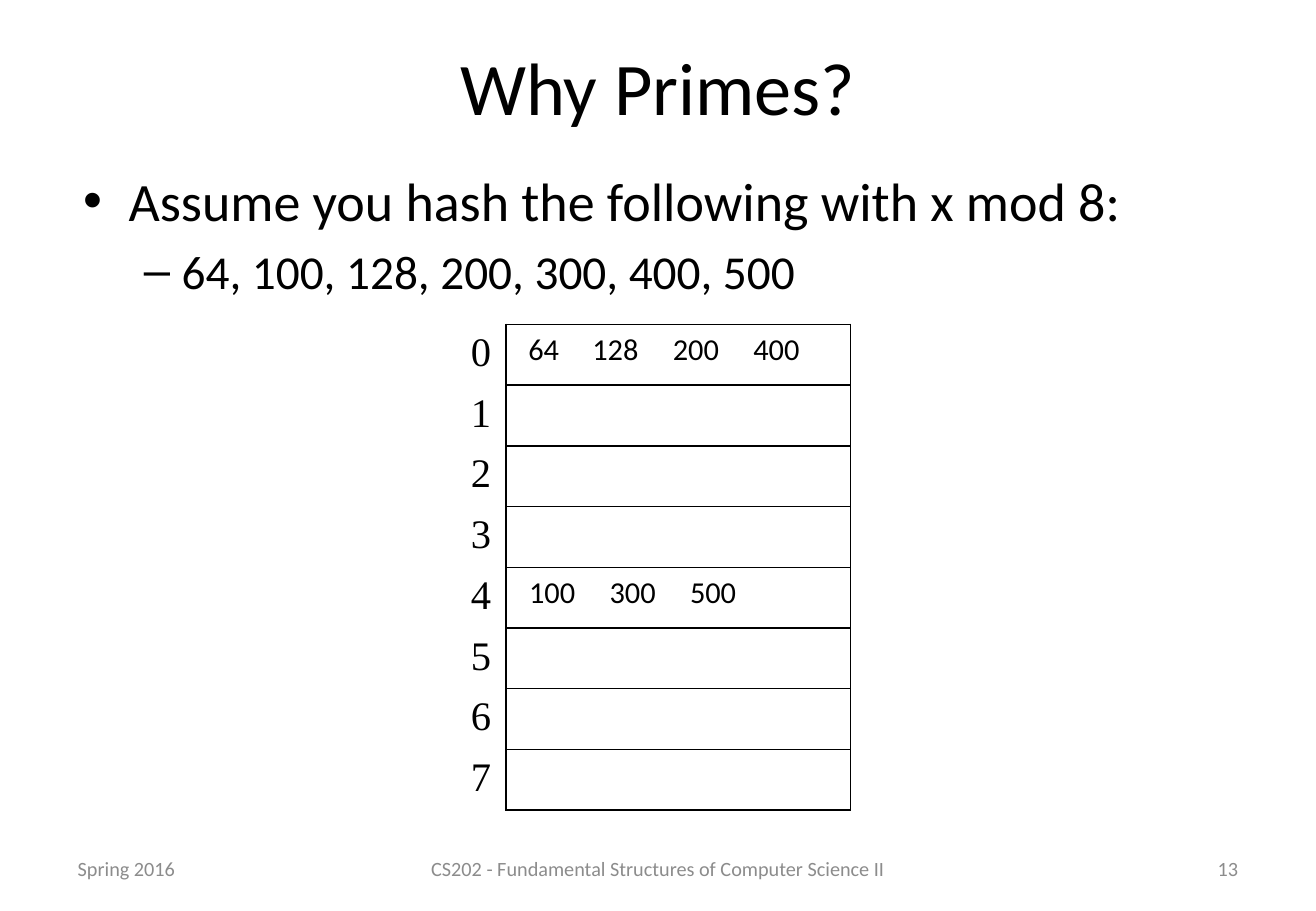
import pptx
import pptx.util
import pptx.dml.color
import pptx.enum.text
import pptx.oxml.ns
import lxml.etree

COLOURS = {"ink": "000000", "footer": "8C8C8C", "page": "FFFFFF"}
SLIDE_WIDTH, SLIDE_HEIGHT = 10.83, 7.5
COLUMN, ROW = SLIDE_WIDTH / 26, SLIDE_HEIGHT / 15
BUCKETS = 8
KEYS = [64, 100, 128, 200, 300, 400, 500]
TABLE_LEFT, TABLE_TOP, SLOT_COLUMNS = 9, 5.34, 6.8

ALIGN = pptx.enum.text.PP_ALIGN
ANCHOR = pptx.enum.text.MSO_ANCHOR
AUTO_SIZE = pptx.enum.text.MSO_AUTO_SIZE


def grid_area(left, top, width, height):
    """Turn columns and rows of the grid into lengths."""
    return [pptx.util.Inches(cells * unit) for cells, unit in
            ((left, COLUMN), (top, ROW), (width, COLUMN), (height, ROW))]


def format_paragraph(para, size, align=ALIGN.LEFT, font="Calibri", colour="ink"):
    para.alignment = align
    para.font.size = pptx.util.Pt(size)
    para.font.name = font
    para.font.color.rgb = pptx.dml.color.RGBColor.from_string(COLOURS[colour])


def fill_placeholder(holder, area, lines, sizes, align, anchor):
    """Each further line goes one list level deeper."""
    holder.left, holder.top, holder.width, holder.height = area
    frame = holder.text_frame
    frame.text = "\n".join(lines)
    frame.auto_size = AUTO_SIZE.NONE
    frame.vertical_anchor = anchor
    for level, (para, size) in enumerate(zip(frame.paragraphs, sizes)):
        para.level = level
        format_paragraph(para, size, align)


def add_text(page, area, text, size, align, colour="ink", anchor=ANCHOR.TOP, wrap=True):
    frame = page.shapes.add_textbox(*area).text_frame
    frame.word_wrap = wrap
    frame.auto_size = AUTO_SIZE.NONE if wrap else AUTO_SIZE.SHAPE_TO_FIT_TEXT
    frame.vertical_anchor = anchor
    frame.text = text
    format_paragraph(frame.paragraphs[0], size, align, colour=colour)


def draw_borders(cell, sides):
    properties = cell._tc.get_or_add_tcPr()
    for index, side in enumerate(sides):
        line = lxml.etree.Element(pptx.oxml.ns.qn("a:ln" + side),
                                  w=str(pptx.util.Pt(1)))
        fill = lxml.etree.SubElement(line, pptx.oxml.ns.qn("a:solidFill"))
        lxml.etree.SubElement(fill, pptx.oxml.ns.qn("a:srgbClr"), val=COLOURS["ink"])
        properties.insert(index, line)


def add_hash_table(page):
    area = grid_area(TABLE_LEFT, TABLE_TOP, 1 + SLOT_COLUMNS, BUCKETS)
    table = page.shapes.add_table(BUCKETS, 2, *area).table
    table.first_row = table.horz_banding = False
    for column, width in zip(table.columns, (1, SLOT_COLUMNS)):
        column.width = pptx.util.Inches(width * COLUMN)
    for bucket in range(BUCKETS):
        label, slot = table.cell(bucket, 0), table.cell(bucket, 1)
        for cell, sides in ((label, "R"), (slot, "LRTB")):
            cell.fill.background()
            draw_borders(cell, sides)
        label.text = str(bucket)
        format_paragraph(label.text_frame.paragraphs[0], 24, ALIGN.CENTER,
                         "Times New Roman")


def add_keys(page):
    """Put every key in its bucket, side by side."""
    gap = 0.17
    next_left = [TABLE_LEFT + 1.2] * BUCKETS
    for key in KEYS:
        bucket = key % BUCKETS
        width = 0.4 + 0.34 * len(str(key))
        area = grid_area(next_left[bucket], TABLE_TOP + bucket, width, 0.8)
        add_text(page, area, str(key), 18, ALIGN.CENTER, wrap=False)
        next_left[bucket] += width + gap


def add_footers(page):
    for left, width, text, align in (
            (1.3, 6.07, "Spring 2016", ALIGN.LEFT),
            (8.2, 9.6, "CS202 - Fundamental Structures of Computer Science II",
             ALIGN.CENTER),
            (18.63, 6.07, "13", ALIGN.RIGHT)):
        add_text(page, grid_area(left, 13.9, width, 0.8), text, 12, align,
                 "footer", ANCHOR.MIDDLE)


def main():
    deck = pptx.Presentation()
    deck.slide_width = pptx.util.Inches(SLIDE_WIDTH)
    deck.slide_height = pptx.util.Inches(SLIDE_HEIGHT)
    page = deck.slides.add_slide(deck.slide_layouts[1])
    page.background.fill.solid()
    page.background.fill.fore_color.rgb = pptx.dml.color.RGBColor.from_string(
        COLOURS["page"])

    # Title and list
    title, body = page.placeholders
    fill_placeholder(title, grid_area(1.3, 0.5, 23.4, 1.84), ["Why Primes?"],
                     [44], ALIGN.CENTER, ANCHOR.MIDDLE)
    fill_placeholder(body, grid_area(1.4, 2.66, 23.4, 2.5),
                     ["Assume you hash the following with x mod 8:",
                      ", ".join(map(str, KEYS))],
                     [32, 28], ALIGN.LEFT, ANCHOR.TOP)

    # Footer, then the hash table with its keys
    add_footers(page)
    add_hash_table(page)
    add_keys(page)
    deck.save("out.pptx")


if __name__ == "__main__":
    main()
